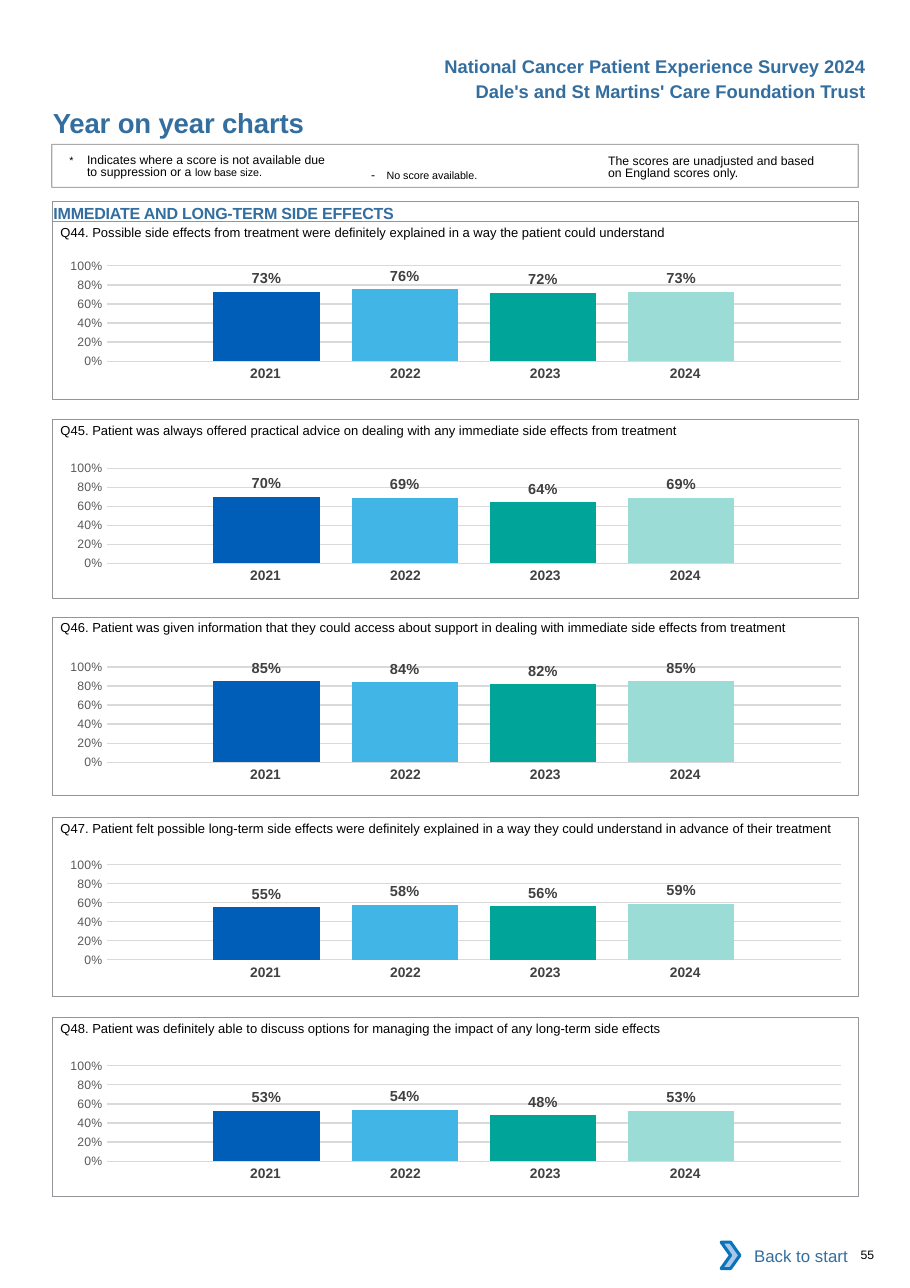
import pptx
import pptx.chart.data
import pptx.dml.color
import pptx.enum.chart
import pptx.enum.shapes
import pptx.enum.text
import pptx.oxml
import pptx.oxml.ns
import pptx.util

COLORS = {"blue": "336E9F", "black": "000000", "frame": "939598", "year": "414042",
          "label": "404040", "axis": "595959", "grid": "D9D9D9", "white": "FFFFFF",
          "arrow": "A8C7E9", "arrow_line": "0A74BB"}
YEARS = {"2021": "005EB8", "2022": "41B6E6", "2023": "00A499", "2024": "9CDCD7"}
PANELS = [
    (17.19, 1.8, "Q44. Possible side effects from treatment were definitely explained in a way the patient could understand",
     (0.73, 0.76, 0.72, 0.73)),
    (32.59, 2.1, "Q45. Patient was always offered practical advice on dealing with any immediate side effects from treatment",
     (0.7, 0.69, 0.64, 0.69)),
    (47.9, 2.23, "Q46. Patient was given information that they could access about support in dealing with immediate side effects from treatment",
     (0.85, 0.84, 0.82, 0.85)),
    (63.47, 2.0, "Q47. Patient felt possible long-term side effects were definitely explained in a way they could understand in advance of their treatment",
     (0.55, 0.58, 0.56, 0.59)),
    (79.0, 2.1, "Q48. Patient was definitely able to discuss options for managing the impact of any long-term side effects",
     (0.53, 0.54, 0.48, 0.53)),
]
ALIGN = pptx.enum.text.PP_ALIGN
ANCHOR = pptx.enum.text.MSO_ANCHOR
SHAPE = pptx.enum.shapes.MSO_SHAPE
QN = pptx.oxml.ns.qn

prs = pptx.Presentation()
prs.slide_width = pptx.util.Inches(8.26)
prs.slide_height = pptx.util.Inches(11.69)
slide = prs.slides.add_slide(prs.slide_layouts[5])


def rgb(name):
    return pptx.dml.color.RGBColor.from_string(COLORS.get(name, name))


def place(x, y, w, h):
    return [int(share * side / 100) for share, side in
            zip((x, y, w, h), (prs.slide_width, prs.slide_height) * 2)]


def style_font(font, size, color, bold=False):
    for key, value in {"name": "Arial", "size": pptx.util.Pt(size), "bold": bold}.items():
        setattr(font, key, value)
    font.color.rgb = rgb(color)


def write(tf, runs, color="black", bold=False, align=ALIGN.LEFT, anchor=ANCHOR.TOP,
          leading=None, hang=0, spacing=0):
    formats = {"margin_left": 0, "margin_right": 0, "margin_top": 0, "margin_bottom": 0,
               "word_wrap": True, "vertical_anchor": anchor}
    for key, value in formats.items():
        setattr(tf, key, value)
    p = tf.paragraphs[0]
    p.alignment = align
    if leading:
        p.line_spacing = pptx.util.Pt(leading)
    if hang:
        indent = pptx.util.Inches(hang)
        p._p.get_or_add_pPr().set("marL", str(indent))
        p._p.get_or_add_pPr().set("indent", str(-indent))
    for text, size in runs:
        r = p.add_run()
        r.text = text
        style_font(r.font, size, color, bold)
        if spacing:
            r._r.get_or_add_rPr().set("spc", str(spacing))


def add_text(box, runs, **formats):
    sp = slide.shapes.add_textbox(*place(*box))
    write(sp.text_frame, runs, **formats)


def add_outline(box, kind=SHAPE.RECTANGLE, fill=None, line="frame", width=0.5):
    sp = slide.shapes.add_shape(kind, *place(*box))
    sp.shadow.inherit = False
    if fill:
        sp.fill.solid()
        sp.fill.fore_color.rgb = rgb(fill)
    else:
        sp.fill.background()
    if line:
        sp.line.color.rgb = rgb(line)
        sp.line.width = pptx.util.Pt(width)
    else:
        sp.line.fill.background()
    return sp


def add_header(x, y, w, h):
    lines = ("National Cancer Patient Experience Survey 2024",
             "Dale's and St Martins' Care Foundation Trust")
    for i, line in enumerate(lines):
        add_text((x, y + i * h / 2, w, h / 2), [(line, 12)],
                 color="blue", bold=True, align=ALIGN.RIGHT)
    title = slide.shapes.title
    title.left, title.top, title.width, title.height = place(5.8, 8.21, 54.48, 2.57)
    write(title.text_frame, [("Year on year charts", 18)], color="blue", bold=True, spacing=-10)


def add_legend(x, y, w, h):
    frame = add_outline((x, y, w, h), width=0.75)
    color = frame.line._ln.find(".//" + QN("a:srgbClr"))
    color.append(pptx.oxml.parse_xml(
        f'<a:alpha {pptx.oxml.ns.nsdecls("a")} val="80000"/>'))
    add_text((x + 1.94, y + 0.77, 29.06, 2.1),
             [("*\t", 7), ("Indicates where a score is not available due to suppression or a ", 8),
              ("low base size.", 7)], leading=8.1, hang=0.16)
    add_text((x + 35.11, y + 1.75, 19.37, 1.1),
             [("-\t", 8), ("No score available.", 7)], hang=0.14)
    add_text((x + 61.14, y + 0.86, 23.6, 2.1),
             [("The scores are unadjusted and based on England scores only.", 8)], leading=8.1)


def add_section(*box):
    sp = add_outline(box)
    write(sp.text_frame, [("IMMEDIATE AND LONG-TERM SIDE EFFECTS", 10.5)],
          color="blue", bold=True, spacing=-10, anchor=ANCHOR.MIDDLE)
    sp.text_frame.margin_left = pptx.util.Inches(0.01)
    sp.text_frame.margin_top = pptx.util.Inches(0.02)


def add_scores(box, scores):
    data = pptx.chart.data.CategoryChartData(number_format="0%")
    data.categories = ["1"]
    for i, score in enumerate(scores, 1):
        data.add_series(f"Series {i}", [score])
    chart = slide.shapes.add_chart(pptx.enum.chart.XL_CHART_TYPE.COLUMN_CLUSTERED,
                                   *place(*box), data).chart
    chart.has_legend = chart.has_title = False
    chart.font.name, chart.font.size = "Calibri", pptx.util.Pt(10)
    chart.category_axis.visible = False
    axis = chart.value_axis
    formats = {"minimum_scale": 0, "maximum_scale": 1, "major_unit": 0.2,
               "major_tick_mark": pptx.enum.chart.XL_TICK_MARK.NONE}
    for key, value in formats.items():
        setattr(axis, key, value)
    axis.format.line.fill.background()
    axis.major_gridlines.format.line.color.rgb = rgb("grid")
    axis.major_gridlines.format.line.width = pptx.util.Pt(0.75)
    axis.tick_labels.number_format = "0%"
    axis.tick_labels.number_format_is_linked = False
    style_font(axis.tick_labels.font, 8, "axis")
    plot = chart.plots[0]
    plot.gap_width, plot.overlap, plot.vary_by_categories = 200, -30, False
    for series, color in zip(plot.series, YEARS.values()):
        series.format.fill.solid()
        series.format.fill.fore_color.rgb = rgb(color)
        labels = series.data_labels
        formats = {"show_value": True, "number_format": "0%", "number_format_is_linked": False,
                   "position": pptx.enum.chart.XL_LABEL_POSITION.OUTSIDE_END}
        for key, value in formats.items():
            setattr(labels, key, value)
        style_font(labels.font, 9.5, "label", True)
    area = chart._chartSpace.chart.plotArea
    for old in area.findall(QN("c:layout")):
        area.remove(old)
    shares = {"x": 0.08, "y": 0.15, "w": 0.91, "h": 0.67}
    modes = '<c:layoutTarget val="inner"/><c:xMode val="edge"/><c:yMode val="edge"/>'
    sizes = "".join(f'<c:{key} val="{value}"/>' for key, value in shares.items())
    area.insert(0, pptx.oxml.parse_xml(
        f'<c:layout {pptx.oxml.ns.nsdecls("c")}><c:manualLayout>{modes}{sizes}'
        '</c:manualLayout></c:layout>'))


def add_years(*box):
    table = slide.shapes.add_table(1, len(YEARS), *place(*box)).table
    table.first_row = table.horz_banding = False
    table._tbl.tblPr.find(QN("a:tableStyleId")).text = "{2D5ABB26-0587-4C30-8999-92F81FD0307C}"
    for cell, year in zip(table.rows[0].cells, YEARS):
        cell.fill.background()
        write(cell.text_frame, [(year, 9)], color="year", bold=True, align=ALIGN.CENTER)
        cell.margin_left = cell.margin_right = 0
        cell.margin_top = cell.margin_bottom = pptx.util.Inches(0.05)


def add_panel(x, y, w, h, drop, question, scores):
    add_outline((x, y, w, h))
    add_text((x + 0.9, y + 0.23, w - 0.9, 1.3), [(question, 8.5)])
    add_scores((x - 1.09, y + drop, w, 11.04), scores)
    add_years(x + 15.74, y + drop + 9, 61.5, 2.31)


def add_footer(x, y, w, h):
    link = add_outline((x + 0.85, y, w - 0.85, h), fill="white", line=None)
    write(link.text_frame, [("Back to start", 11)], color="blue",
          align=ALIGN.RIGHT, anchor=ANCHOR.MIDDLE)
    link.text_frame.margin_right = pptx.util.Inches(0.1)
    add_outline((x, y + 0.77, 2.06, 2.05), SHAPE.CHEVRON, "arrow", "arrow_line", 2)
    add_text((x + w + 0.2, y + 1.15, 4.84, 1.11), [("55", 8)])


def main():
    add_header(47.46, 4.3, 47.7, 3.87)
    add_legend(5.69, 11.21, 88.62, 3.34)
    add_section(5.75, 15.65, 88.62, 1.54)
    for top, drop, question, scores in PANELS:
        add_panel(5.75, top, 88.62, 13.86, drop, question, scores)
    add_footer(79.25, 95.67, 15.13, 3.59)
    prs.save("out.pptx")


if __name__ == "__main__":
    main()
